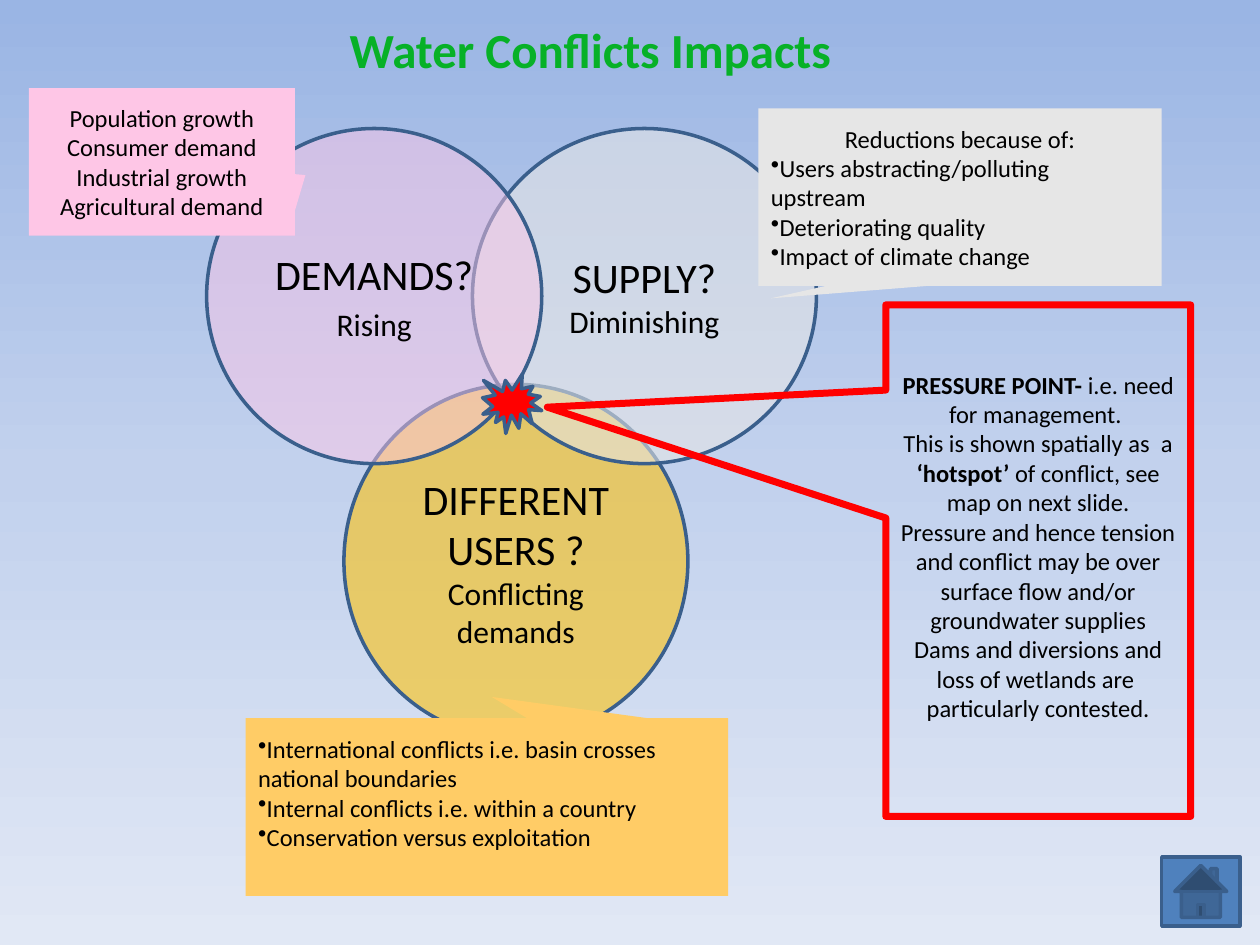
from copy import deepcopy

from pptx import Presentation
from pptx.dml.color import RGBColor
from pptx.enum.shapes import MSO_SHAPE
from pptx.enum.text import MSO_ANCHOR, PP_ALIGN
from pptx.oxml.ns import qn
from pptx.oxml.xmlchemy import OxmlElement
from pptx.util import Inches, Pt

SKY = [
    (0, RGBColor(0x9A, 0xB5, 0xE4)),
    (0.5, RGBColor(0xC2, 0xD1, 0xED)),
    (1, RGBColor(0xE1, 0xE8, 0xF5)),
]
BLACK = RGBColor(0x00, 0x00, 0x00)
GREEN = RGBColor(0x07, 0xB1, 0x27)
RED = RGBColor(0xFF, 0x00, 0x00)
GOLD = RGBColor(0xFF, 0xC0, 0x00)
ORANGE = RGBColor(0xFF, 0xCC, 0x66)
PINK = RGBColor(0xFE, 0xC6, 0xE6)
GREY = RGBColor(0xE6, 0xE6, 0xE6)
BLUE = RGBColor(0x4F, 0x81, 0xBD)
NAVY = RGBColor(0x3A, 0x5F, 0x8C)


def apply(target, values):
    for name, value in values.items():
        setattr(target, name, value)


class ConflictSlide:
    font = {"name": "Calibri", "size": Pt(14), "bold": False}
    frame = {"word_wrap": True, "vertical_anchor": MSO_ANCHOR.MIDDLE}

    def __init__(self, deck):
        self.slide = deck.slides.add_slide(deck.slide_layouts[1])

    def background(self, stops):
        fill = self.slide.background.fill
        fill.gradient()
        fill.gradient_angle = 270
        stop_list = self.slide.element.find(".//" + qn("a:gsLst"))
        stop_list.insert(1, deepcopy(stop_list[0]))
        for stop, (position, color) in zip(fill.gradient_stops, stops):
            stop.position = position
            stop.color.rgb = color

    def place(self, part, box):
        apply(part, dict(zip(("left", "top", "width", "height"), map(Inches, box))))

    def paint(self, part, fill, alpha=None, line=None, weight=2):
        if fill is None:
            part.fill.background()
        else:
            part.fill.solid()
            part.fill.fore_color.rgb = fill
        if alpha is not None:
            opacity = OxmlElement("a:alpha")
            opacity.set("val", str(alpha * 1000))
            part.element.spPr.find(".//" + qn("a:srgbClr")).append(opacity)
        if line is None:
            part.line.fill.background()
        else:
            part.line.color.rgb = line
            part.line.width = Pt(weight)

    def set_text(self, part, paragraphs, color=BLACK):
        frame = part.text_frame
        apply(frame, self.frame)
        for index, runs in enumerate(paragraphs):
            paragraph = frame.add_paragraph() if index else frame.paragraphs[0]
            paragraph.alignment = PP_ALIGN.CENTER
            for text, changes in runs:
                run = paragraph.add_run()
                run.text = text
                apply(run.font, {**self.font, **changes})
                run.font.color.rgb = color

    def bullet(self, paragraph, indent=0, hanging=0, mark=None):
        properties = paragraph._p.get_or_add_pPr()
        properties.set("marL", str(Inches(indent)))
        properties.set("indent", str(Inches(-hanging)))
        if mark:
            paragraph.alignment = PP_ALIGN.LEFT
            properties.append(OxmlElement("a:buChar"))
            properties[-1].set("char", mark)
        else:
            properties.append(OxmlElement("a:buNone"))

    def title(self, text, box):
        heading = self.slide.shapes.title
        self.place(heading, box)
        self.set_text(heading, [[(text, {"size": Pt(28), "bold": True})]], GREEN)

    def shape(self, kind, box, **look):
        part = self.slide.shapes.add_shape(kind, *map(Inches, box))
        part.shadow.inherit = False
        self.paint(part, **look)
        return part

    def circle_text(self, part, name, trend):
        self.set_text(part, [[(name, {"size": Pt(24)})], [(trend, {"size": Pt(18)})]])

    def circle(self, name, trend, box, fill, alpha):
        part = self.shape(MSO_SHAPE.OVAL, box, fill=fill, alpha=alpha, line=NAVY)
        self.circle_text(part, name, trend)

    def body_circle(self, name, trend, box, fill, alpha):
        body = self.slide.placeholders[1]
        self.place(body, box)
        outline = OxmlElement("a:prstGeom")
        outline.set("prst", "ellipse")
        outline.append(OxmlElement("a:avLst"))
        body.element.spPr.append(outline)
        self.paint(body, fill, alpha, NAVY)
        self.circle_text(body, name, trend)
        for paragraph in body.text_frame.paragraphs:
            self.bullet(paragraph, 0.38, 0.38)
        body.element.getparent().append(body.element)

    def callout(self, box, tip, paragraphs, bullets=(), bottom=0.05, **look):
        part = self.shape(MSO_SHAPE.RECTANGULAR_CALLOUT, box, **look)
        for index, value in enumerate(tip):
            part.adjustments[index] = value
        lines = [[(line, {})] if isinstance(line, str) else line
                 for line in [*paragraphs, *bullets]]
        self.set_text(part, lines)
        part.text_frame.margin_bottom = Inches(bottom)
        for paragraph in part.text_frame.paragraphs[len(paragraphs):]:
            self.bullet(paragraph, mark="•")


def main():
    deck = Presentation()
    apply(deck, {"slide_width": Inches(10), "slide_height": Inches(7.5)})
    page = ConflictSlide(deck)
    strong = {"bold": True}

    page.background(SKY)
    page.title("Water Conflicts Impacts", (2.34, 0, 4.69, 0.78))
    page.circle("DIFFERENT USERS ?", "Conflicting demands",
                (2.73, 3.05, 2.73, 2.81), GOLD, 56)
    page.circle("SUPPLY?", "Diminishing", (3.75, 1.02, 2.73, 2.66), GREY, 58)
    page.body_circle("DEMANDS?", "Rising", (1.64, 1.02, 2.66, 2.66), PINK, 49)
    page.shape(MSO_SHAPE.EXPLOSION1, (3.83, 2.97, 0.47, 0.47), fill=RED, line=NAVY)

    page.callout((1.95, 5.7, 3.83, 1.41), (0.01, -0.62), [], [
        "International conflicts i.e. basin crosses national boundaries",
        "Internal conflicts i.e. within a country",
        "Conservation versus exploitation",
    ], bottom=0.28, fill=ORANGE)
    page.callout((7.03, 2.42, 2.42, 4.06), (-1.61, -0.3), [
        [("PRESSURE POINT- ", strong), ("i.e. need for management. ", {})],
        [("This is shown spatially as  a ", {}), ("‘hotspot’ ", strong),
         ("of conflict, see map on next slide.", {})],
        "Pressure and hence tension and conflict may be over surface flow "
        "and/or groundwater supplies",
        "Dams and diversions and loss of wetlands are  particularly contested.",
    ], bottom=0.28, fill=None, line=RED, weight=4)
    page.callout((0.23, 0.7, 2.11, 1.17), (0.54, 0.09), [
        "Population growth",
        "Consumer demand",
        "Industrial growth",
        "Agricultural demand",
    ], fill=PINK)
    page.callout((6.02, 0.86, 3.2, 1.41), (-0.47, 0.57), ["Reductions because of:"], [
        "Users abstracting/polluting upstream",
        "Deteriorating quality",
        "Impact of climate change",
    ], fill=GREY)
    page.shape(MSO_SHAPE.ACTION_BUTTON_HOME, (9.22, 6.8, 0.62, 0.55),
               fill=BLUE, line=NAVY)
    deck.save("out.pptx")


if __name__ == "__main__":
    main()
